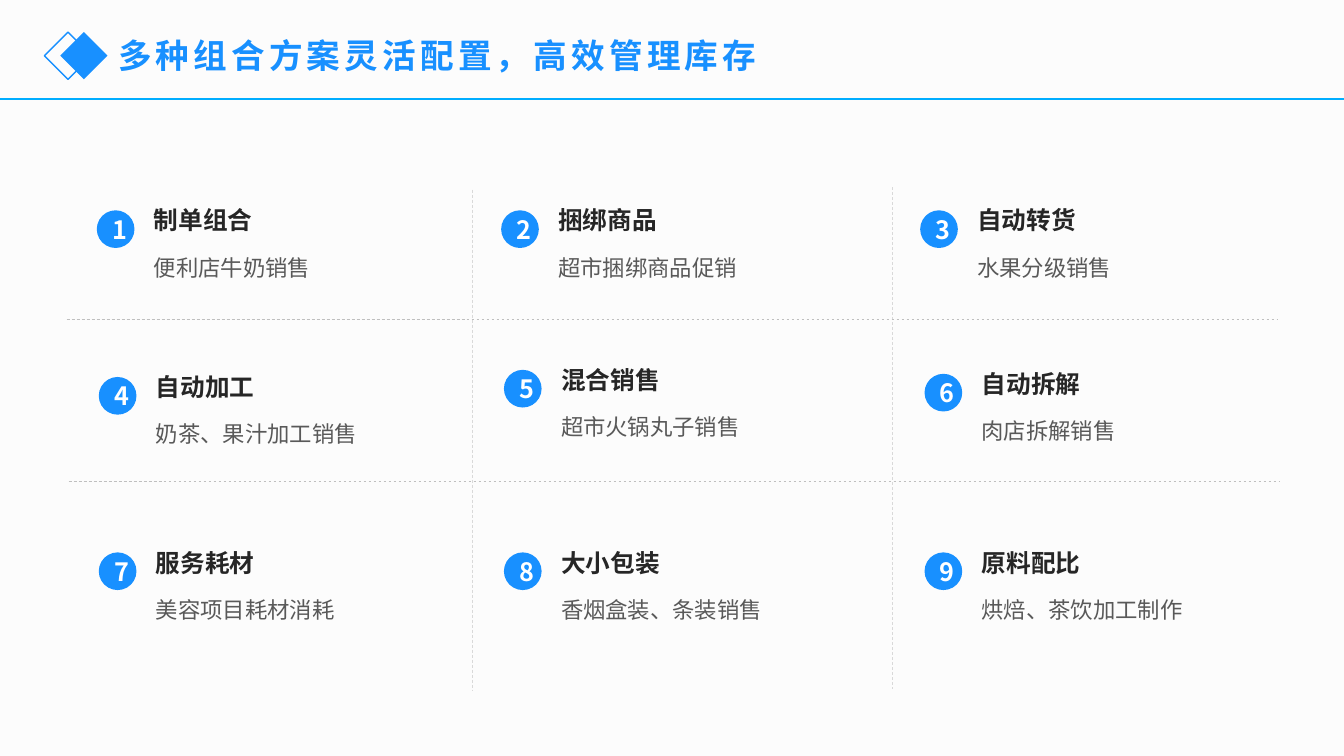
"""Build the slide of nine stock combination schemes."""
from lxml import etree
from pptx import Presentation
from pptx import util as u
from pptx.dml.color import RGBColor
from pptx.enum import dml, shapes, text
from pptx.oxml import ns

FONT = "Noto Sans CJK SC"
COLOURS = {
    "page": "FCFCFC",
    "blue": "1890FF",
    "rule": "00ADFF",
    "row": "BFBFBF",
    "column": "D9D9D9",
    "name": "262626",
    "detail": "595959",
    "white": "FFFFFF",
}
SCHEMES = [
    (3.63, 5.05, "制单组合", "便利店牛奶销售"),
    (13.82, 5.05, "捆绑商品", "超市捆绑商品促销"),
    (24.38, 5.05, "自动转货", "水果分级销售"),
    (3.68, 9.25, "自动加工", "奶茶、果汁加工销售"),
    (13.89, 9.07, "混合销售", "超市火锅丸子销售"),
    (24.49, 9.17, "自动拆解", "肉店拆解销售"),
    (3.68, 13.67, "服务耗材", "美容项目耗材消耗"),
    (13.89, 13.67, "大小包装", "香烟盒装、条装销售"),
    (24.49, 13.67, "原料配比", "烘焙、茶饮加工制作"),
]
DIVIDERS = [
    (22.48, 4.72, 22.48, 17.35, "column"),
    (11.91, 4.78, 11.91, 17.4, "column"),
    (1.68, 8.05, 32.21, 8.05, "row"),
    (1.73, 12.12, 32.26, 12.12, "row"),
]


def colour(name):
    return RGBColor.from_string(COLOURS[name])


def write(frame, words, size, shade, bold=False, spacing=0):
    para = frame.paragraphs[0]
    para.text = words
    font = para.font
    font.name, font.size, font.bold = FONT, u.Pt(size), bold
    font.color.rgb = colour(shade)
    defaults = para._p.pPr.find(ns.qn("a:defRPr"))
    etree.SubElement(defaults, ns.qn("a:ea"), typeface=FONT)
    if spacing:
        defaults.set("spc", str(spacing * 100))
    return para


def add_title(page, words):
    title = page.shapes.title
    title.left, title.top = u.Cm(2.72), u.Cm(0.76)
    title.width, title.height = u.Cm(19.05), u.Cm(1.27)
    frame = title.text_frame
    frame.auto_size = text.MSO_AUTO_SIZE.NONE
    frame.vertical_anchor = text.MSO_ANCHOR.TOP
    para = write(frame, words, 24, "blue", bold=True, spacing=3)
    para.alignment = text.PP_ALIGN.LEFT


def add_line(page, left, top, right, bottom, shade, width=0.5, dashed=True):
    line = page.shapes.add_connector(
        shapes.MSO_CONNECTOR.STRAIGHT, u.Cm(left), u.Cm(top), u.Cm(right), u.Cm(bottom))
    line.line.color.rgb = colour(shade)
    line.line.width = u.Pt(width)
    if dashed:
        line.line.dash_style = dml.MSO_LINE.DASH
    etree.SubElement(line._element.spPr, ns.qn("a:effectLst"))


def add_mark(page, kind, left, top, size, filled=True):
    mark = page.shapes.add_shape(kind, u.Cm(left), u.Cm(top), u.Cm(size), u.Cm(size))
    mark.shadow.inherit = False
    if filled:
        mark.fill.solid()
        mark.fill.fore_color.rgb = colour("blue")
        mark.line.fill.background()
    else:
        mark.fill.background()
        mark.line.color.rgb = colour("blue")
        mark.line.width = u.Pt(1)
    return mark


def add_text(page, left, top, width, height, words, size, shade, bold=False):
    box = page.shapes.add_textbox(u.Cm(left), u.Cm(top), u.Cm(width), u.Cm(height))
    box.text_frame.word_wrap = True
    return write(box.text_frame, words, size, shade, bold)


def add_badge(page, left, top, number):
    badge = add_mark(page, shapes.MSO_SHAPE.OVAL, left, top, 0.95)
    frame = badge.text_frame
    frame.margin_left, frame.margin_right = u.Cm(0.25), u.Cm(0.08)
    frame.margin_top = frame.margin_bottom = 0
    frame.vertical_anchor = text.MSO_ANCHOR.MIDDLE
    para = write(frame, str(number), 18, "white", bold=True)
    para.alignment = text.PP_ALIGN.CENTER


def add_scheme(page, number, left, top, name, detail):
    para = add_text(page, left, top + 1.02, 6.12, 1.52, detail, 16, "detail")
    para.line_spacing = 1.3
    para.space_after = u.Pt(8)
    add_text(page, left, top, 4.6, 1.12, name, 17.6, "name", bold=True)
    add_badge(page, left - 1.19, top + 0.25, number)


def main():
    deck = Presentation()
    deck.slide_width, deck.slide_height = u.Cm(33.87), u.Cm(19.05)
    page = deck.slides.add_slide(deck.slide_layouts.get_by_name("Title Only"))
    page.background.fill.solid()
    page.background.fill.fore_color.rgb = colour("page")

    add_line(page, 0, 2.49, 33.87, 2.49, "rule", width=1, dashed=False)
    add_mark(page, shapes.MSO_SHAPE.DIAMOND, 1.12, 0.81, 1.19, filled=False)
    add_mark(page, shapes.MSO_SHAPE.DIAMOND, 1.52, 0.81, 1.19)
    add_title(page, "多种组合方案灵活配置，高效管理库存")
    for divider in DIVIDERS:
        add_line(page, *divider)
    for number, scheme in enumerate(SCHEMES, start=1):
        add_scheme(page, number, *scheme)

    deck.save("out.pptx")


if __name__ == "__main__":
    main()
